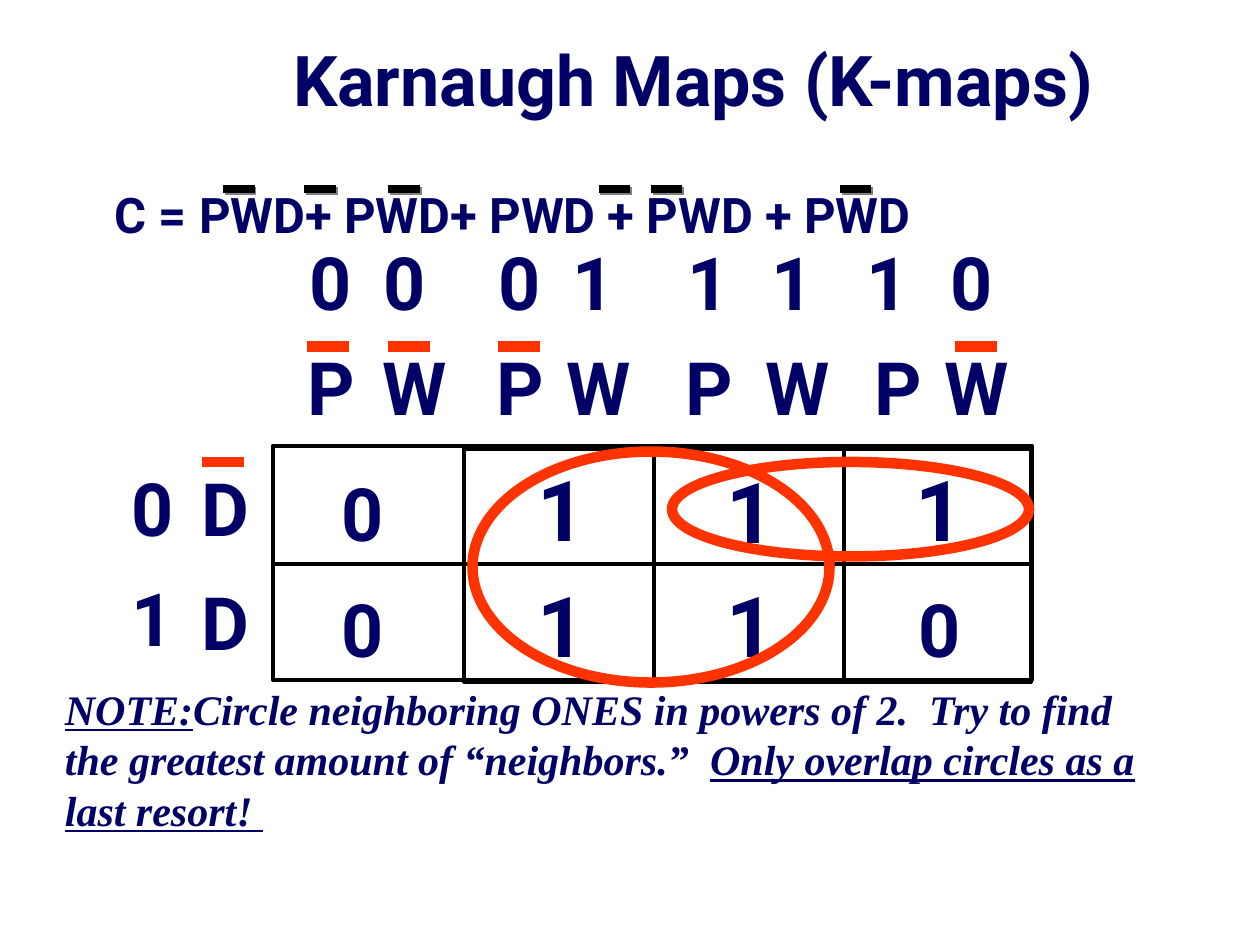
from lxml import etree
from pptx import Presentation
from pptx.dml.color import RGBColor
from pptx.enum.shapes import MSO_CONNECTOR, MSO_SHAPE
from pptx.enum.text import MSO_ANCHOR, MSO_AUTO_SIZE, PP_ALIGN
from pptx.oxml import parse_xml
from pptx.oxml.ns import nsdecls, qn
from pptx.util import Pt

NAVY = RGBColor(0x00, 0x00, 0x66)
BLACK = RGBColor(0x00, 0x00, 0x00)
RED = RGBColor(0xFF, 0x33, 0x00)
LEFT, CENTER = PP_ALIGN.LEFT, PP_ALIGN.CENTER
TOP, MIDDLE = MSO_ANCHOR.TOP, MSO_ANCHOR.MIDDLE
FIT = MSO_AUTO_SIZE.SHAPE_TO_FIT_TEXT
STRAIGHT = MSO_CONNECTOR.STRAIGHT
RECTANGLE, OVAL = MSO_SHAPE.RECTANGLE, MSO_SHAPE.OVAL
BAR_SHADOW = (
    f'<a:effectLst {nsdecls("a")}><a:outerShdw dist="17961" dir="2700000">'
    '<a:srgbClr val="808080"/></a:outerShdw></a:effectLst>'
)

presentation = Presentation()
presentation.slide_width, presentation.slide_height = Pt(720), Pt(540)
slide = presentation.slides.add_slide(presentation.slide_layouts[6])


def add_text(text, left, top, width, height, size, align=CENTER, anchor=TOP):
    box = slide.shapes.add_textbox(Pt(left), Pt(top), Pt(width), Pt(height))
    frame = box.text_frame
    frame.word_wrap = True
    frame.vertical_anchor = anchor
    paragraph = frame.paragraphs[0]
    paragraph.alignment = align
    font = paragraph.font
    font.name, font.size, font.bold = "Roboto", Pt(size), True
    font.color.rgb = NAVY
    if text:
        paragraph.add_run().text = text
    return box


def add_bar(left, top, length, color, weight):
    bar = slide.shapes.add_connector(
        STRAIGHT, Pt(left), Pt(top), Pt(left + length), Pt(top))
    bar.line.color.rgb = color
    bar.line.width = Pt(weight)
    return bar


# Title
add_text("Karnaugh Maps (K-maps)", 72, 0, 648, 90, 40, anchor=MIDDLE)

# Boolean equation with a hanging indent
equation = add_text("C = PWD+ PWD+ PWD + PWD + PWD", 58.5, 102, 661.5, 54, 28, LEFT)
properties = equation.text_frame.paragraphs[0]._p.get_or_add_pPr()
properties.set("marL", str(Pt(27)))
properties.set("indent", str(Pt(-27)))

# Complement bars over the equation
for left in (127.5, 174, 222, 342, 372, 480):
    bar = add_bar(left, 108, 18, BLACK, 4.5)
    bar._element.spPr.append(parse_xml(BAR_SHADOW))

# Map grid: outer frame, column frames, top row frame
for left, top, width, height in (
    (156, 255, 433.5, 133.5),
    (373.5, 256.5, 215.5, 133),
    (482.25, 256.5, 106.75, 133),
    (265, 256.5, 108.5, 133),
    (156, 255, 433.5, 67.5),
):
    frame = slide.shapes.add_shape(RECTANGLE, Pt(left), Pt(top), Pt(width), Pt(height))
    frame.shadow.inherit = False
    frame.fill.background()
    frame.line.color.rgb = BLACK
    frame.line.width = Pt(2.25)

# Column headings: bit pair above the variables P and W
headings = (
    ("00", 162, 204, 162, 204, 66),
    ("01", 270, 312, 270, 312, 60),
    ("11", 378, 426, 378, 426, 60),
    ("10", 480, 528, 486, 528, 60),
)
for bits, first_bit, second_bit, p_left, w_left, w_width in headings:
    add_text(bits[0], first_bit, 132, 54, 57.6, 42).text_frame.auto_size = FIT
    add_text(bits[1], second_bit, 132, 54, 57.6, 42).text_frame.auto_size = FIT
    add_text("P", p_left, 192, 54, 57.6, 42).text_frame.auto_size = FIT
    add_text("W", w_left, 192, w_width, 57.6, 42).text_frame.auto_size = FIT

# Row headings: bit beside the variable D
for bit, bit_top, d_top in (("0", 261, 261), ("1", 324, 326)):
    add_text(bit, 60, bit_top, 54, 57.6, 42).text_frame.auto_size = FIT
    add_text("D", 102, d_top, 54, 57.6, 42).text_frame.auto_size = FIT

# Complement bars over the headings
for left, top in ((175.5, 198), (222, 198), (284.5, 198), (546, 198), (115.5, 264)):
    add_bar(left, top, 24, RED, 6)._element.spPr.append(
        etree.Element(qn("a:effectLst")))

# Cell values: ones are larger than zeros
cell_lefts = (180, 294, 402, 510)
for values, zero_top, one_tops in (
    ("0111", 264, (258, 258, 259, 258)),
    ("0110", 330, (324, 324, 324, 324)),
):
    for value, left, one_top in zip(values, cell_lefts, one_tops):
        if value == "1":
            cell = add_text(value, left, one_top, 54, 64.8, 48)
        else:
            cell = add_text(value, left, zero_top, 54, 57.6, 42)
        cell.text_frame.auto_size = FIT

# Circles around neighboring ones
for left, top, width, height in ((270, 258, 204, 132), (384, 264, 204, 54)):
    circle = slide.shapes.add_shape(OVAL, Pt(left), Pt(top), Pt(width), Pt(height))
    circle.shadow.inherit = False
    circle.fill.background()
    circle.line.color.rgb = RED
    circle.line.width = Pt(6)

# Note
note = add_text("", 30, 387, 630, 93.6, 24, LEFT)
note.text_frame.auto_size = FIT
for text, underlined in (
    ("NOTE:", True),
    ("Circle neighboring ONES in powers of 2.  Try to find the greatest "
     "amount of “neighbors.”  ", False),
    ("Only overlap circles as a last resort! ", True),
):
    run = note.text_frame.paragraphs[0].add_run()
    run.text = text
    run.font.name = "Times New Roman"
    run.font.italic = True
    run.font.underline = underlined

presentation.save("out.pptx")
